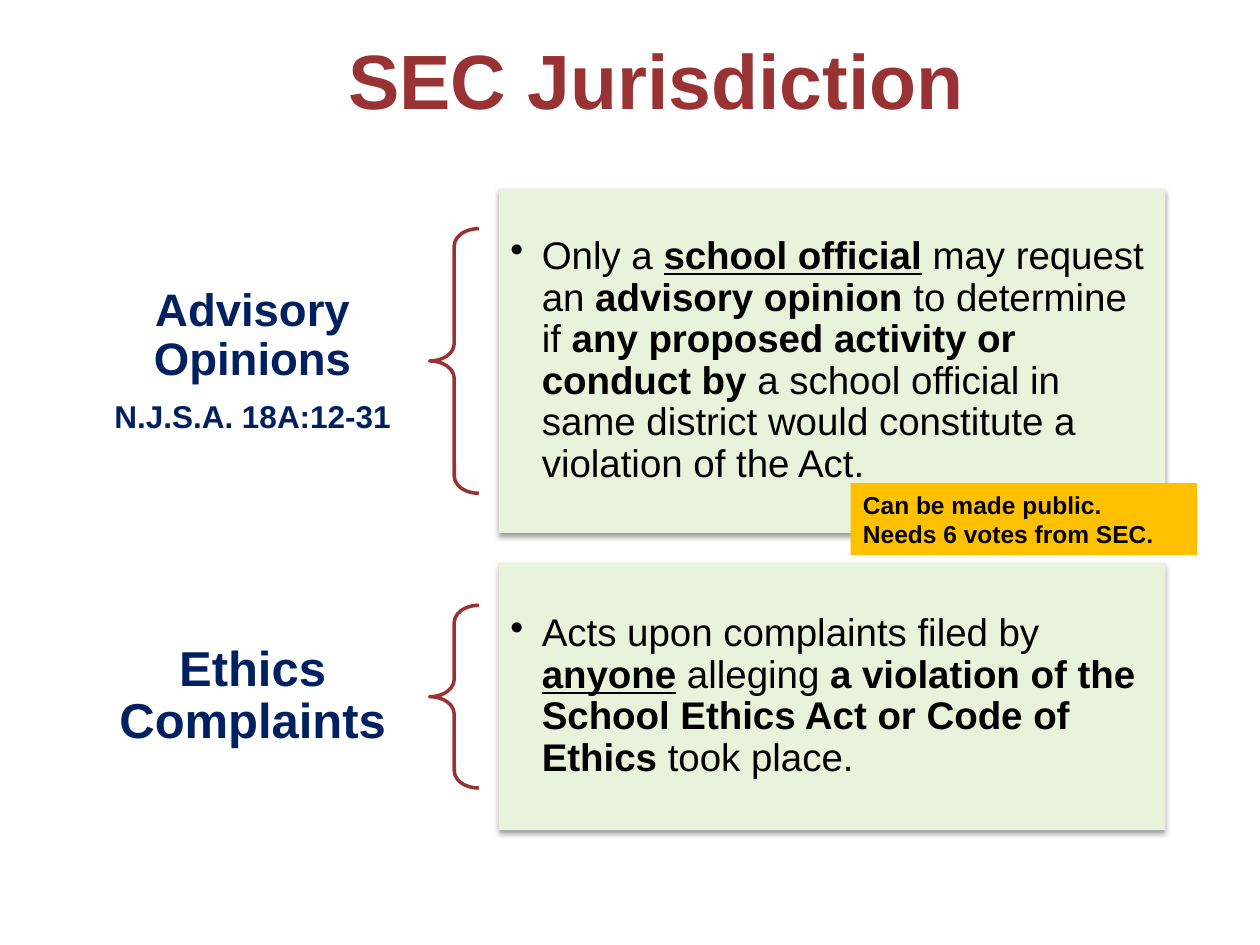
from dataclasses import dataclass

from lxml import etree
from pptx import Presentation
from pptx import util as u
from pptx.dml.color import RGBColor
from pptx.enum import shapes, text
from pptx.oxml import ns


@dataclass(frozen=True)
class Theme:
    font: str = "Arial"
    red: str = "993333"
    navy: str = "002060"
    black: str = "000000"
    green: str = "E9F2DA"
    amber: str = "FFC000"
    title: float = 44
    body: float = 22
    citation: float = 18
    callout: float = 14


@dataclass(frozen=True)
class Span:
    words: str
    bold: bool = False
    underline: bool = False


@dataclass(frozen=True)
class Heading:
    words: str
    size: float


@dataclass(frozen=True)
class Topic:
    headings: tuple[Heading, ...]
    spans: tuple[Span, ...]
    panel_height: float
    brace_height: float
    label_inset: float


THEME = Theme()
PANEL_TOP = 108
PANEL_GAP = 17.2
PANEL_LEFT, PANEL_WIDTH = 285.1, 380.9
BRACE_LEFT, BRACE_WIDTH = 245.5, 28.1
LABEL_LEFT, LABEL_WIDTH = 42.5, 203.8

TOPICS = (
    Topic(
        (Heading("Advisory Opinions", 26),
         Heading("N.J.S.A. 18A:12-31", THEME.citation)),
        (Span("Only a "),
         Span("school official", True, True),
         Span(" may request an "),
         Span("advisory opinion ", True),
         Span("to determine if "),
         Span("any proposed activity or conduct by ", True),
         Span("a school official in same district would constitute a violation of the Act.")),
        196.6, 151.2, 14.4,
    ),
    Topic(
        (Heading("Ethics Complaints", 28),),
        (Span("Acts upon complaints filed by "),
         Span("anyone", True, True),
         Span(" alleging "),
         Span("a violation of the School Ethics Act or Code of Ethics", True),
         Span(" took place.")),
        152.6, 104.4, 15.8,
    ),
)


def set_font(para, size: float, color: str, bold: bool | None = None) -> None:
    font = para.font
    font.name, font.size, font.bold = THEME.font, u.Pt(size), bold
    font.color.rgb = RGBColor.from_string(color)


def set_frame(box, side: float = 7.2, end: float = 3.6):
    frame = box.text_frame
    frame.word_wrap = True
    frame.vertical_anchor = text.MSO_ANCHOR.MIDDLE
    frame.margin_left = frame.margin_right = u.Pt(side)
    frame.margin_top = frame.margin_bottom = u.Pt(end)
    return frame


def add_text_box(page, left: float, top: float, width: float, height: float):
    return page.shapes.add_textbox(u.Pt(left), u.Pt(top), u.Pt(width), u.Pt(height))


def add_rectangle(page, left: float, top: float, width: float, height: float, fill: str):
    box = page.shapes.add_shape(shapes.MSO_SHAPE.RECTANGLE,
                                u.Pt(left), u.Pt(top), u.Pt(width), u.Pt(height))
    box.shadow.inherit = False
    box.fill.solid()
    box.fill.fore_color.rgb = RGBColor.from_string(fill)
    box.line.fill.background()
    return box


def add_drop_shadow(box) -> None:
    effects = box.element.spPr.find(ns.qn("a:effectLst"))
    shadow = etree.SubElement(effects, ns.qn("a:outerShdw"), blurRad=str(u.Pt(3.1)),
                              dist=str(u.Pt(1.6)), dir="5400000", rotWithShape="0")
    color = etree.SubElement(shadow, ns.qn("a:srgbClr"), val=THEME.black)
    etree.SubElement(color, ns.qn("a:alpha"), val="38000")


def add_bullet(para) -> None:
    properties = para._p.get_or_add_pPr()
    properties.set("marL", str(u.Pt(18)))
    properties.set("indent", str(u.Pt(-18)))
    etree.SubElement(properties, ns.qn("a:buChar"), char="•")


def add_title(page) -> None:
    box = add_text_box(page, 84.2, 23.8, 581.8, 41.8)
    para = set_frame(box).paragraphs[0]
    para.text = "SEC Jurisdiction"
    para.alignment = text.PP_ALIGN.CENTER
    set_font(para, THEME.title, THEME.red, True)


def add_label(page, topic: Topic, middle: float) -> None:
    height = 100
    box = add_text_box(page, LABEL_LEFT, middle - height / 2, LABEL_WIDTH, height)
    frame = set_frame(box, topic.label_inset, 5)
    for index, heading in enumerate(topic.headings):
        para = frame.add_paragraph() if index else frame.paragraphs[0]
        para.text = heading.words
        para.alignment = text.PP_ALIGN.CENTER
        para.line_spacing = 0.9
        para.space_after = u.Pt(round(heading.size * 0.35))
        set_font(para, heading.size, THEME.navy, True)


def add_brace(page, height: float, middle: float) -> None:
    brace = page.shapes.add_shape(shapes.MSO_SHAPE.LEFT_BRACE,
                                  u.Pt(BRACE_LEFT), u.Pt(middle - height / 2),
                                  u.Pt(BRACE_WIDTH), u.Pt(height))
    brace.shadow.inherit = False
    brace.adjustments[0] = 0.35
    brace.adjustments[1] = 0.5
    brace.fill.background()
    brace.line.color.rgb = RGBColor.from_string(THEME.red)
    brace.line.width = u.Pt(2)


def add_panel(page, topic: Topic, top: float) -> None:
    box = add_rectangle(page, PANEL_LEFT, top, PANEL_WIDTH, topic.panel_height, THEME.green)
    add_drop_shadow(box)
    para = set_frame(box, 6.5, 6.5).paragraphs[0]
    add_bullet(para)
    para.alignment = text.PP_ALIGN.LEFT
    para.line_spacing = 0.9
    para.space_after = u.Pt(3.3)
    set_font(para, THEME.body, THEME.black)
    for span in topic.spans:
        run = para.add_run()
        run.text = span.words
        run.font.bold = span.bold
        run.font.underline = span.underline


def add_callout(page) -> None:
    box = add_rectangle(page, 486, 276, 198, 41.2, THEME.amber)
    para = set_frame(box).paragraphs[0]
    para.text = "Can be made public.\vNeeds 6 votes from SEC."
    para.alignment = text.PP_ALIGN.LEFT
    set_font(para, THEME.callout, THEME.black, True)


def main() -> None:
    deck = Presentation()
    deck.slide_width, deck.slide_height = u.Pt(720), u.Pt(540)
    page = deck.slides.add_slide(deck.slide_layouts[6])
    add_title(page)
    top = PANEL_TOP
    for topic in TOPICS:
        middle = top + topic.panel_height / 2
        add_label(page, topic, middle)
        add_brace(page, topic.brace_height, middle)
        add_panel(page, topic, top)
        top += topic.panel_height + PANEL_GAP
    add_callout(page)
    deck.save("out.pptx")


if __name__ == "__main__":
    main()
